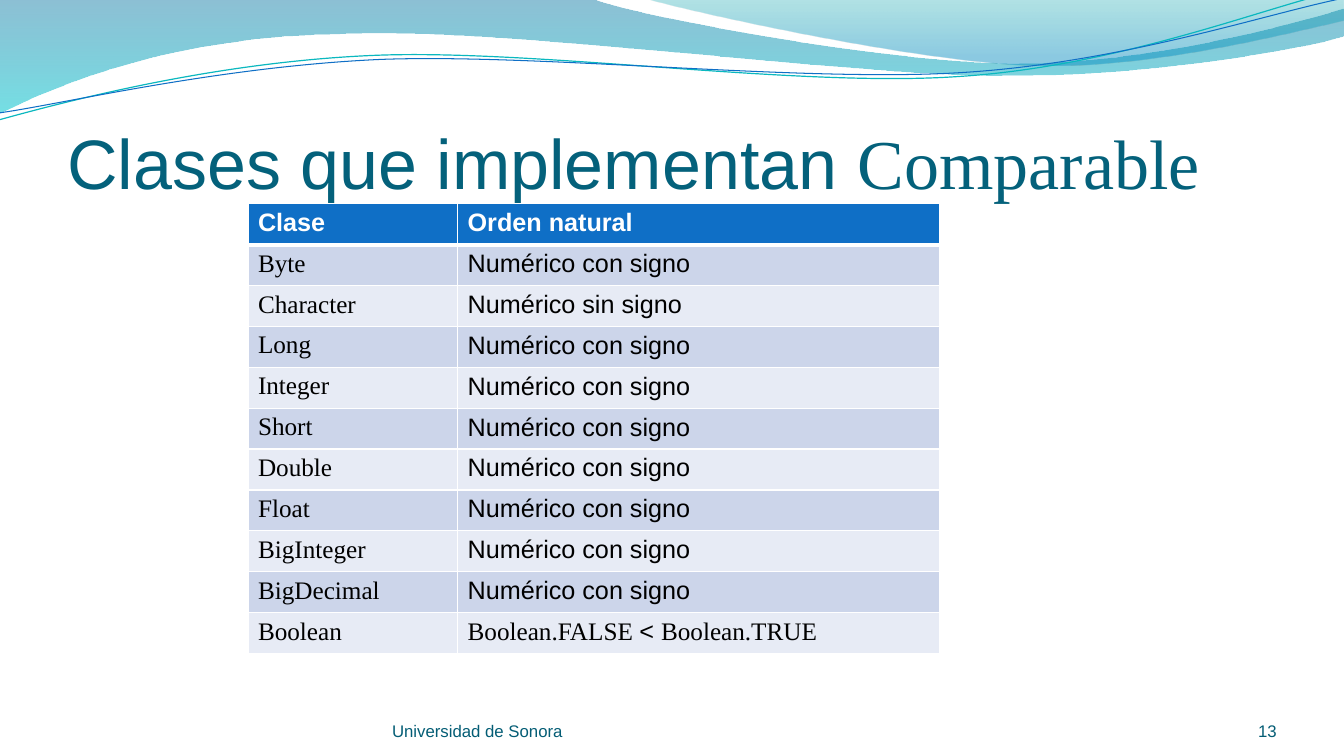
from itertools import chain
from lxml.etree import SubElement
from pptx import Presentation
from pptx.dml.color import RGBColor
from pptx.enum.text import MSO_ANCHOR, MSO_AUTO_SIZE, PP_ALIGN
from pptx.oxml.ns import qn
from pptx.util import Inches, Pt

SANS, SERIF = "Arial", "Times New Roman"
TEAL, BLUE, WHITE, BLACK = "04617B", "0F6FC6", "FFFFFF", "000000"
FOOTER = "045D75"
BANDS = ["E7EBF5", "CCD5EA"]

WAVES = [
    ([(0, 0)], [(44.03, -0.13)],
     [(47.55, 2.27), (66.38, 8.4), (75.83, 8.4)],
     [(85.35, 8.4), (95.85, 3.47), (99.98, 1.2)],
     [(100.13, 4.8)],
     [(98.33, 5.87), (87, 10.13), (74.55, 10)],
     [(62.18, 10), (38.18, 3.73), (25.73, 4.53)],
     [(12.9, 4.8), (4.58, 11.07), (-0.08, 15.07)]),
    ([(47.93, -0.13)],
     [(50.93, 1.47), (68.18, 8.27), (76.88, 8.67)],
     [(85.58, 9.2), (96.15, 4.27), (99.98, 2.8)],
     [(99.98, 0)]),
]
WAVE_STOPS = [
    [(0, "0074A1", 45), (1, "00C6CF", 55)],
    [(0, "00A1A9", 30), (0.8, "008BBF", 45)],
]
STRANDS = [
    ([(-0.23, 11.67)],
     [(4.73, 9.68), (15.83, 5.41), (27.68, 5.48)],
     [(39.6, 5.53), (59.1, 12.39), (71.18, 11.92)],
     [(83.18, 11.6), (94.05, 4.76), (99.98, 2.87)]),
    ([(-0.15, 10.73)],
     [(4.65, 9.93), (16.35, 5.98), (28.35, 6.05)],
     [(40.28, 6.25), (59.63, 11.74), (71.55, 11.4)],
     [(83.55, 11.08), (94.2, 5.57), (100.2, 3.93)]),
]
STRAND_LINES = [("0AB8BF", 0.85), (BLUE, 0.75)]

SIGNED = "Numérico con signo"
ORDERS = {
    "Byte": SIGNED, "Character": "Numérico sin signo", "Long": SIGNED,
    "Integer": SIGNED, "Short": SIGNED, "Double": SIGNED, "Float": SIGNED,
    "BigInteger": SIGNED, "BigDecimal": SIGNED,
}


def rgb(value):
    return RGBColor.from_string(value)


def add_run(p, text, font=SANS, size=18, color=BLACK, bold=False):
    r = p.add_run()
    r.text = text
    r.font.name, r.font.size, r.font.bold = font, Pt(size), bold
    r.font.color.rgb = rgb(color)


def bend(sp, segments):
    lines = list(sp.element.iter(qn("a:lnTo")))
    for segment in segments[1:]:
        group, lines = lines[:len(segment)], lines[len(segment):]
        if len(segment) == 3:
            curve = group[0].makeelement(qn("a:cubicBezTo"))
            group[0].addprevious(curve)
            for line in group:
                curve.append(line[0])
                line.getparent().remove(line)


class Deck:
    def __init__(self, width, height):
        self.prs = Presentation()
        self.prs.slide_width, self.prs.slide_height = Inches(width), Inches(height)
        self.s = self.prs.slides.add_slide(self.prs.slide_layouts[5])

    def x(self, columns):
        return round(self.prs.slide_width * columns / 100)

    def y(self, rows):
        return round(self.prs.slide_height * rows / 100)

    def box(self, left, top, width, height):
        return self.x(left), self.y(top), self.x(width), self.y(height)

    def outline(self, segments, close):
        points = [(self.x(a), self.y(b)) for a, b in chain(*segments)]
        builder = self.s.shapes.build_freeform(*points[0])
        builder.add_line_segments(points[1:], close=close)
        sp = builder.convert_to_shape()
        sp.shadow.inherit = False
        bend(sp, segments)
        return sp

    def wave(self, segments, stops):
        sp = self.outline(segments, True)
        sp.line.fill.background()
        sp.fill.gradient()
        sp.fill.gradient_angle = 270
        for stop, (position, color, _) in zip(sp.fill.gradient_stops, stops):
            stop.position, stop.color.rgb = position, rgb(color)
        for clr, (_, _, opacity) in zip(sp.element.iter(qn("a:srgbClr")), stops):
            SubElement(clr, qn("a:alpha"), val=str(opacity * 1000))

    def strand(self, segments, color, width):
        sp = self.outline(segments, False)
        sp.rotation = 357.3
        sp.fill.background()
        sp.line.color.rgb, sp.line.width = rgb(color), Pt(width)

    def frame(self, sp, runs, align=PP_ALIGN.LEFT, inset=0, **fmt):
        tf = sp.text_frame
        tf.word_wrap, tf.auto_size = True, MSO_AUTO_SIZE.NONE
        tf.vertical_anchor = MSO_ANCHOR.BOTTOM
        tf.margin_left = tf.margin_right = tf.margin_bottom = 0
        tf.margin_top = Inches(inset)
        p = tf.paragraphs[0]
        p.alignment = align
        for text, font in runs:
            add_run(p, text, font, **fmt)

    def title(self, runs, *place):
        sp = self.s.shapes.title
        self.s.shapes.element.append(sp.element)
        sp.left, sp.top, sp.width, sp.height = self.box(*place)
        self.frame(sp, runs, inset=0.05, size=50, color=TEAL)

    def footer(self, text, *place, align=PP_ALIGN.LEFT):
        sp = self.s.shapes.add_textbox(*self.box(*place))
        self.frame(sp, [(text, SANS)], align, size=12, color=FOOTER)

    def borders(self, cell, **widths):
        tcPr = cell._tc.get_or_add_tcPr()
        for side in "LRTB":
            ln = SubElement(tcPr, qn(f"a:ln{side}"), w=str(Pt(widths.get(side, 1))))
            SubElement(SubElement(ln, qn("a:solidFill")), qn("a:srgbClr"), val=WHITE)

    def table(self, rows, left, top, columns, row_height):
        place = self.box(left, top, sum(columns), row_height * len(rows))
        tbl = self.s.shapes.add_table(len(rows), len(columns), *place).table
        for column, width in zip(tbl.columns, columns):
            column.width = self.x(width)
        for i, row in enumerate(rows):
            tbl.rows[i].height = self.y(row_height)
            header = i == 0
            for j, runs in enumerate(row):
                cell = tbl.cell(i, j)
                self.borders(cell, T=3 if i == 1 else 1, B=3 if header else 1)
                cell.fill.solid()
                cell.fill.fore_color.rgb = rgb(BLUE if header else BANDS[i % 2])
                for text, font in runs:
                    add_run(cell.text_frame.paragraphs[0], text, font,
                            color=WHITE if header else BLACK, bold=header)


def main():
    deck = Deck(40 / 3, 7.5)
    for segments, stops in zip(WAVES, WAVE_STOPS):
        deck.wave(segments, stops)
    for segments, line in zip(STRANDS, STRAND_LINES):
        deck.strand(segments, *line)
    deck.title([("Clases que implementan ", SANS), ("Comparable", SERIF)],
               5, 10.27, 90, 16.67)
    rows = [[[("Clase", SANS)], [("Orden natural", SANS)]]]
    rows += [[[(name, SERIF)], [(order, SANS)]] for name, order in ORDERS.items()]
    rows.append([[("Boolean", SERIF)],
                 [("Boolean.FALSE ", SERIF), ("< ", SANS), ("Boolean.TRUE", SERIF)]])
    deck.table(rows, 18.45, 26.96, [15.6, 35.85], 5.41)
    deck.footer("Universidad de Sonora", 29.17, 92.67, 36.68, 5.33)
    deck.footer("13", 86.67, 92.67, 8.33, 5.33, align=PP_ALIGN.RIGHT)
    deck.prs.save("out.pptx")


if __name__ == "__main__":
    main()
